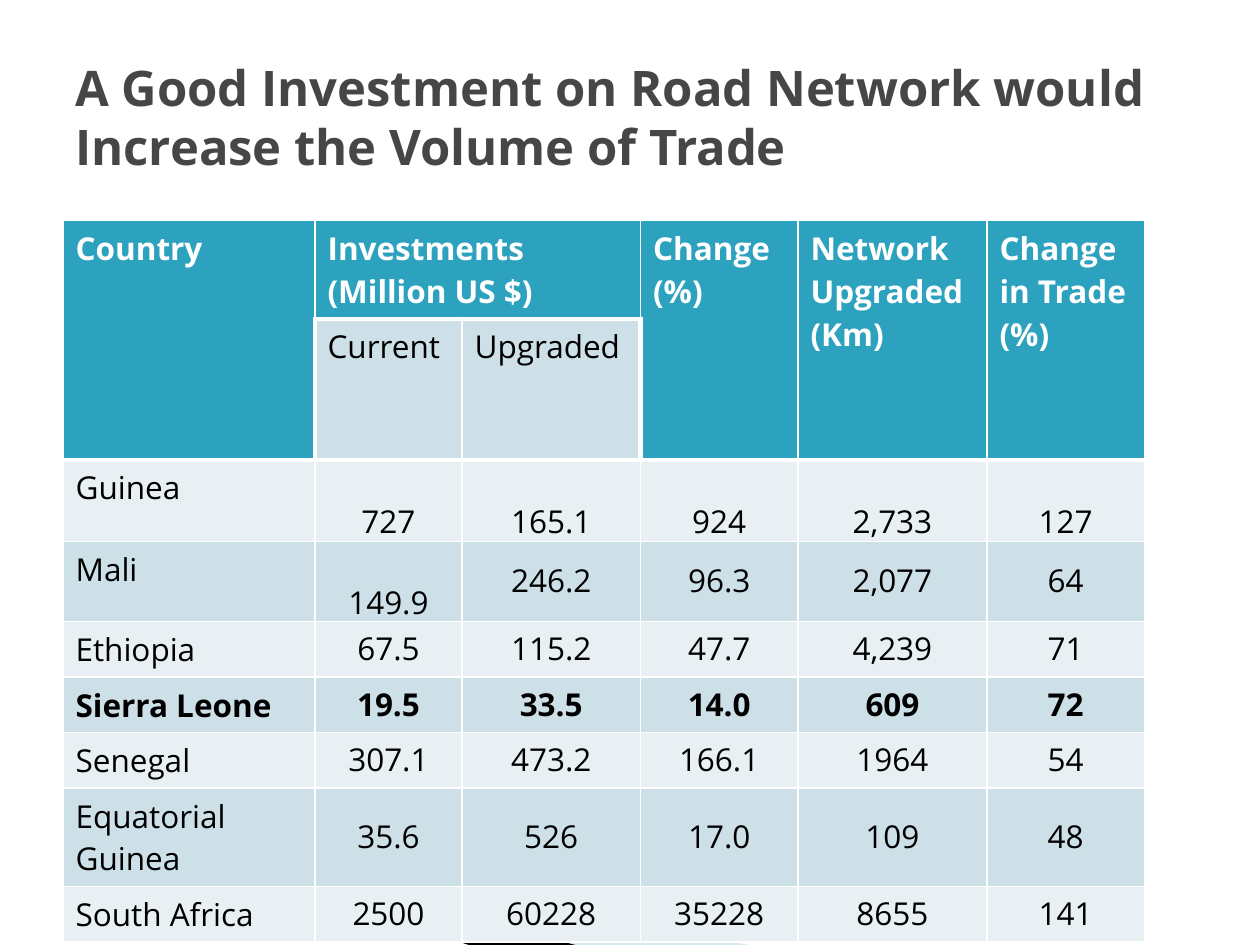
"""Build a slide with a table of road investment and change in trade by country."""
from lxml.etree import SubElement
from pptx import Presentation
from pptx.dml.color import RGBColor
from pptx.enum.text import MSO_ANCHOR as Anchor, PP_ALIGN as Align
from pptx.oxml.ns import qn
from pptx.util import Pt

TITLE = "A Good Investment on Road Network would Increase the Volume of Trade"
HEADERS = [
    ("Country", "", "", "", "", ""),
    ("", "Current", "Upgraded", "", "", ""),
]
HEADERS[0] = ("Country", "Investments (Million US $)", "", "Change (%)",
              "Network Upgraded (Km)", "Change in Trade (%)")
COUNTRIES = [
    ("Guinea", "727", "165.1", "924", "2,733", "127"),
    ("Mali", "149.9", "246.2", "96.3", "2,077", "64"),
    ("Ethiopia", "67.5", "115.2", "47.7", "4,239", "71"),
    ("Sierra Leone", "19.5", "33.5", "14.0", "609", "72"),
    ("Senegal", "307.1", "473.2", "166.1", "1964", "54"),
    ("Equatorial Guinea", "35.6", "526", "17.0", "109", "48"),
    ("South Africa", "2500", "60228", "35228", "8655", "141"),
]
HIGHLIGHT = "Sierra Leone"
LOW_VALUES = {"727", "165.1", "924", "2,733", "127", "149.9"}
MERGES = [((0, 0), (1, 0)), ((0, 1), (0, 2))] + [((0, c), (1, c)) for c in (3, 4, 5)]
COLUMN_WIDTHS = [144, 84, 102, 90, 108, 90]
ROW_HEIGHTS = [56, 80.3, 46.4, 46, 31.7, 31.7, 31.7, 56, 31.5]
COLORS = {"header": "2DA2BF", "dark band": "CDE0E8", "light band": "E8F0F4",
          "white": "FFFFFF", "black": "000000", "title": "464646", "swoosh": "9FCBDC"}
SWOOSHES = [
    ("swoosh", 40, [(39.6, 468.7), (428.4, 540), (328.3, 540), (39.6, 468)]),
    ("black", 100, [(38.2, 467.3), (329, 540), (267.8, 540), (38.9, 468)]),
]


def color(name):
    return RGBColor.from_string(COLORS[name])


def write(frame, text, size=18, ink="black", bold=False, align=Align.LEFT, spacing=None):
    frame.word_wrap = True
    paragraph = frame.paragraphs[0]
    paragraph.alignment = align
    if spacing:
        paragraph.line_spacing = spacing
    run = paragraph.add_run()
    run.text = text
    run.font.name, run.font.size, run.font.bold = "Open Sans", Pt(size), bold
    run.font.color.rgb = color(ink)


def add_swoosh(slide, fill, opacity, points):
    builder = slide.shapes.build_freeform(*points[0], scale=Pt(1))
    builder.add_line_segments(points[1:], close=True)
    shape = builder.convert_to_shape()
    shape.shadow.inherit = False
    shape.line.fill.background()
    shape.fill.solid()
    shape.fill.fore_color.rgb = color(fill)
    if opacity < 100:
        hue = shape._element.spPr.find(".//" + qn("a:srgbClr"))
        SubElement(hue, qn("a:alpha"), val=str(opacity * 1000))


def set_borders(cell, row, column):
    sub_header = column in (1, 2)
    thick = {
        "L": row == 1 and column == 1 or row < 2 and column == 3,
        "R": row == 1 and column == 2 or row == 1 and column == 0,
        "T": row == 2 or row == 1 and sub_header,
        "B": row == 1 or row == 0 and sub_header,
    }
    thick["L"] = thick["L"] and row == 1
    properties = cell._tc.get_or_add_tcPr()
    for side, is_thick in thick.items():
        line = SubElement(properties, qn(f"a:ln{side}"), w=str(Pt(3 if is_thick else 1)))
        fill = SubElement(line, qn("a:solidFill"))
        SubElement(fill, qn("a:srgbClr"), val=COLORS["white"])


def fill_cell(cell, text, row, column):
    is_header = row == 0 or row == 1 and column not in (1, 2)
    is_value = row > 1 and column > 0
    set_borders(cell, row, column)
    cell.fill.solid()
    cell.fill.fore_color.rgb = color(
        "header" if is_header else "dark band" if row % 2 else "light band")
    side, edge = (5, 0) if is_value else (7.2, 3.6)
    cell.margin_left = cell.margin_right = Pt(side)
    cell.margin_top = cell.margin_bottom = Pt(edge)
    cell.vertical_anchor = Anchor.TOP
    if is_value:
        cell.vertical_anchor = Anchor.BOTTOM if row < 4 and text in LOW_VALUES else Anchor.MIDDLE
    if text:
        write(cell.text_frame, text, ink="white" if is_header else "black",
              bold=is_header or row > 1 and COUNTRIES[row - 2][0] == HIGHLIGHT,
              align=Align.CENTER if is_value else Align.LEFT,
              spacing=0.89 if is_value else None)


def add_table(slide):
    rows = HEADERS + COUNTRIES
    table = slide.shapes.add_table(
        len(rows), len(COLUMN_WIDTHS), Pt(36), Pt(126),
        Pt(sum(COLUMN_WIDTHS)), Pt(sum(ROW_HEIGHTS))).table
    for column, width in zip(table.columns, COLUMN_WIDTHS):
        column.width = Pt(width)
    for row, height in zip(table.rows, ROW_HEIGHTS):
        row.height = Pt(height)
    for row, texts in enumerate(rows):
        for column, text in enumerate(texts):
            fill_cell(table.cell(row, column), text, row, column)
    for first, last in MERGES:
        table.cell(*first).merge(table.cell(*last))


def main():
    presentation = Presentation()
    presentation.slide_width, presentation.slide_height = Pt(720), Pt(540)
    slide = presentation.slides.add_slide(presentation.slide_layouts[6])
    for swoosh in SWOOSHES:
        add_swoosh(slide, *swoosh)
    add_table(slide)
    title = slide.shapes.add_textbox(Pt(36), Pt(21.6), Pt(648), Pt(90)).text_frame
    title.vertical_anchor = Anchor.MIDDLE
    write(title, TITLE, size=28, ink="title", bold=True)
    presentation.save("out.pptx")


if __name__ == "__main__":
    main()
